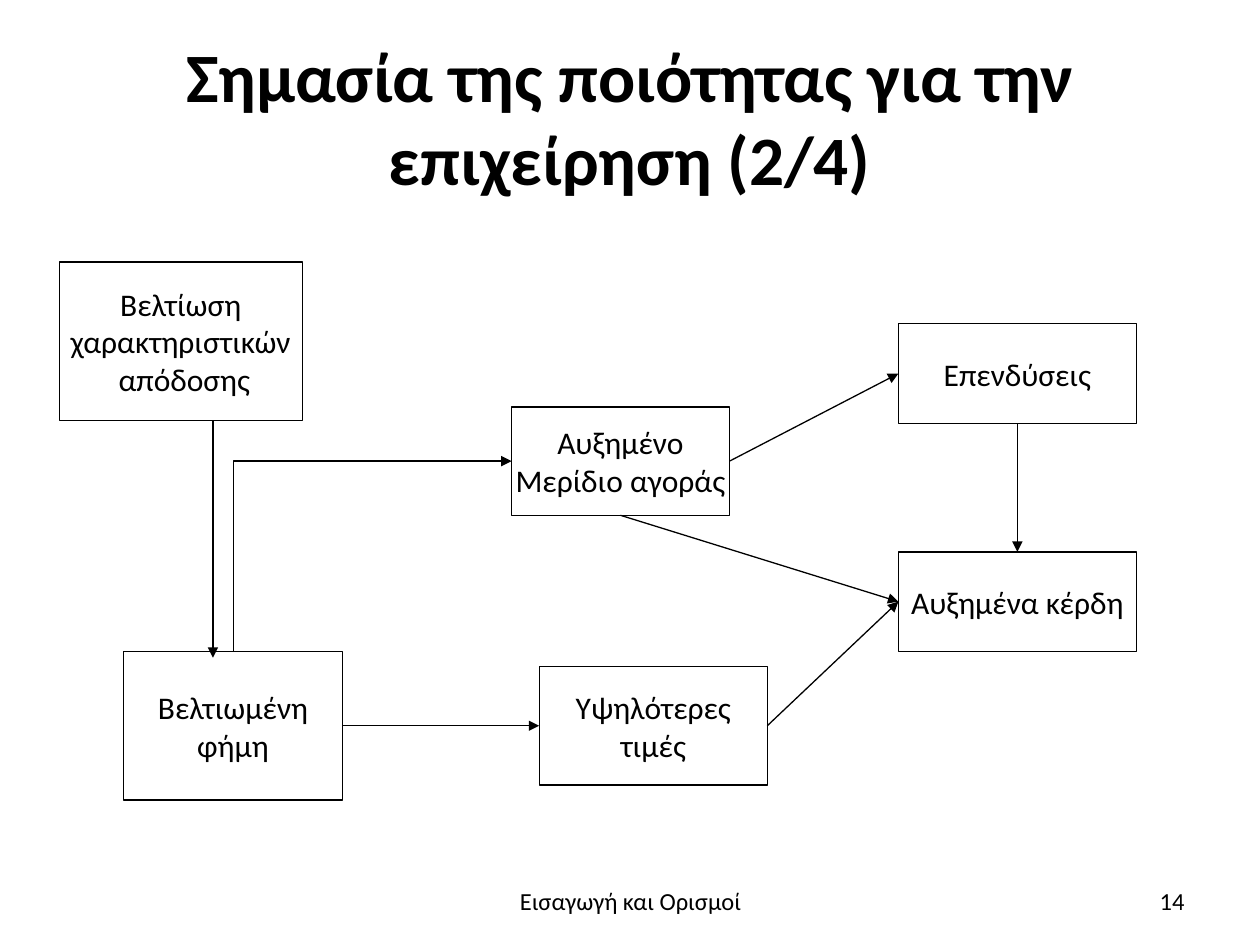
from lxml.etree import SubElement
from pptx import Presentation
from pptx.dml.color import RGBColor
from pptx.enum.shapes import MSO_CONNECTOR as Link, MSO_SHAPE as Shape
from pptx.enum.text import MSO_ANCHOR as Anchor, PP_ALIGN as Align
from pptx.oxml.ns import qn
from pptx.util import Inches, Pt

BLACK = RGBColor(0x00, 0x00, 0x00)
FONT = "Calibri"
TOP, LEFT, BOTTOM, RIGHT = range(4)

STEPS = {
    "performance": (Shape.FLOWCHART_PROCESS, (0.47, 2.08, 1.93, 1.26),
                    ["Βελτίωση", "χαρακτηριστικών", " απόδοσης"]),
    "reputation": (Shape.FLOWCHART_PROCESS, (0.98, 5.17, 1.74, 1.18),
                   ["Βελτιωμένη", "φήμη"]),
    "share": (Shape.FLOWCHART_PROCESS, (4.06, 3.23, 1.73, 0.86),
              ["Αυξημένο", "Μερίδιο αγοράς"]),
    "prices": (Shape.FLOWCHART_PROCESS, (4.28, 5.29, 1.81, 0.94),
               ["Υψηλότερες", "τιμές"]),
    "investments": (Shape.RECTANGLE, (7.13, 2.57, 1.89, 0.79), ["Επενδύσεις"]),
    "profits": (Shape.RECTANGLE, (7.13, 4.38, 1.89, 0.79), ["Αυξημένα κέρδη"]),
}
GLUED_ARROWS = [
    (Link.STRAIGHT, "investments", BOTTOM, "profits", TOP),
    (Link.ELBOW, "reputation", RIGHT, "prices", LEFT),
    (Link.STRAIGHT, "share", RIGHT, "investments", LEFT),
    (Link.STRAIGHT, "prices", RIGHT, "profits", LEFT),
    (Link.STRAIGHT, "share", BOTTOM, "profits", LEFT),
]


def write_lines(frame, lines, size, align, bold=False):
    """Fill a text frame with one vertically centred paragraph per line."""
    frame.vertical_anchor = Anchor.MIDDLE
    for index, line in enumerate(lines):
        para = frame.add_paragraph() if index else frame.paragraphs[0]
        para.text = line
        para.alignment = align
        para.font.name = FONT
        para.font.size = Pt(size)
        para.font.bold = bold
        para.font.color.rgb = BLACK


def add_title(page, box, text):
    """Place and format the title placeholder."""
    title = page.shapes.title
    title.left, title.top, title.width, title.height = map(Inches, box)
    title.text_frame.word_wrap = True
    write_lines(title.text_frame, [text], 39.6, Align.CENTER, bold=True)


def add_footer(page, box, text, align):
    """Add one footer text in its box."""
    footer = page.shapes.add_textbox(*map(Inches, box))
    footer.text_frame.word_wrap = True
    write_lines(footer.text_frame, [text], 14, align)


def add_step(page, kind, box, lines):
    """Add one outlined step of the flow chart."""
    step = page.shapes.add_shape(kind, *map(Inches, box))
    step.shadow.inherit = False
    step.fill.background()
    step.line.color.rgb = BLACK
    step.line.width = Pt(0.75)
    step.text_frame.word_wrap = False
    write_lines(step.text_frame, lines, 18, Align.CENTER)
    return step


def add_arrow(page, kind, start=(0, 0), end=(0, 0)):
    """Add a thin black arrow between two points in inches."""
    arrow = page.shapes.add_connector(kind, *map(Inches, (*start, *end)))
    arrow.line.color.rgb = BLACK
    arrow.line.width = Pt(0.75)
    outline = arrow.line._get_or_add_ln()
    SubElement(outline, qn("a:tailEnd"), type="triangle")
    SubElement(arrow._element.spPr, qn("a:effectLst"))
    return arrow


def add_corner_arrow(page, start, end):
    """Add an arrow that rises from start and then turns right to end."""
    middle_x, middle_y = ((a + b) / 2 for a, b in zip(start, end))
    half_run, half_rise = (end[0] - start[0]) / 2, (start[1] - end[1]) / 2
    arrow = add_arrow(page, Link.ELBOW,
                      (middle_x + half_rise, middle_y + half_run),
                      (middle_x - half_rise, middle_y - half_run))
    properties = arrow._element.spPr
    properties.find(qn("a:xfrm")).set("rot", "5400000")
    properties.find(qn("a:prstGeom")).set("prst", "bentConnector2")


def add_flow(page):
    """Draw the steps and the arrows that join them."""
    steps = {name: add_step(page, *step) for name, step in STEPS.items()}
    for kind, source, source_site, target, target_site in GLUED_ARROWS:
        arrow = add_arrow(page, kind)
        arrow.begin_connect(steps[source], source_site)
        arrow.end_connect(steps[target], target_site)
    add_arrow(page, Link.STRAIGHT, (1.69, 3.34), (1.69, 5.22))
    add_corner_arrow(page, (1.85, 5.17), (4.06, 3.66))


def main():
    """Build and save the deck."""
    deck = Presentation()
    deck.slide_width, deck.slide_height = Inches(10), Inches(7.5)
    page = deck.slides.add_slide(deck.slide_layouts[5])
    add_title(page, (0.5, 0.3, 9, 1.25),
              "Σημασία της ποιότητας για την επιχείρηση (2/4)")
    add_flow(page)
    add_footer(page, (3.42, 6.95, 3.17, 0.4), "Εισαγωγή και Ορισμοί", Align.CENTER)
    add_footer(page, (7.17, 6.95, 2.33, 0.4), "14", Align.RIGHT)
    deck.save("out.pptx")


if __name__ == "__main__":
    main()
